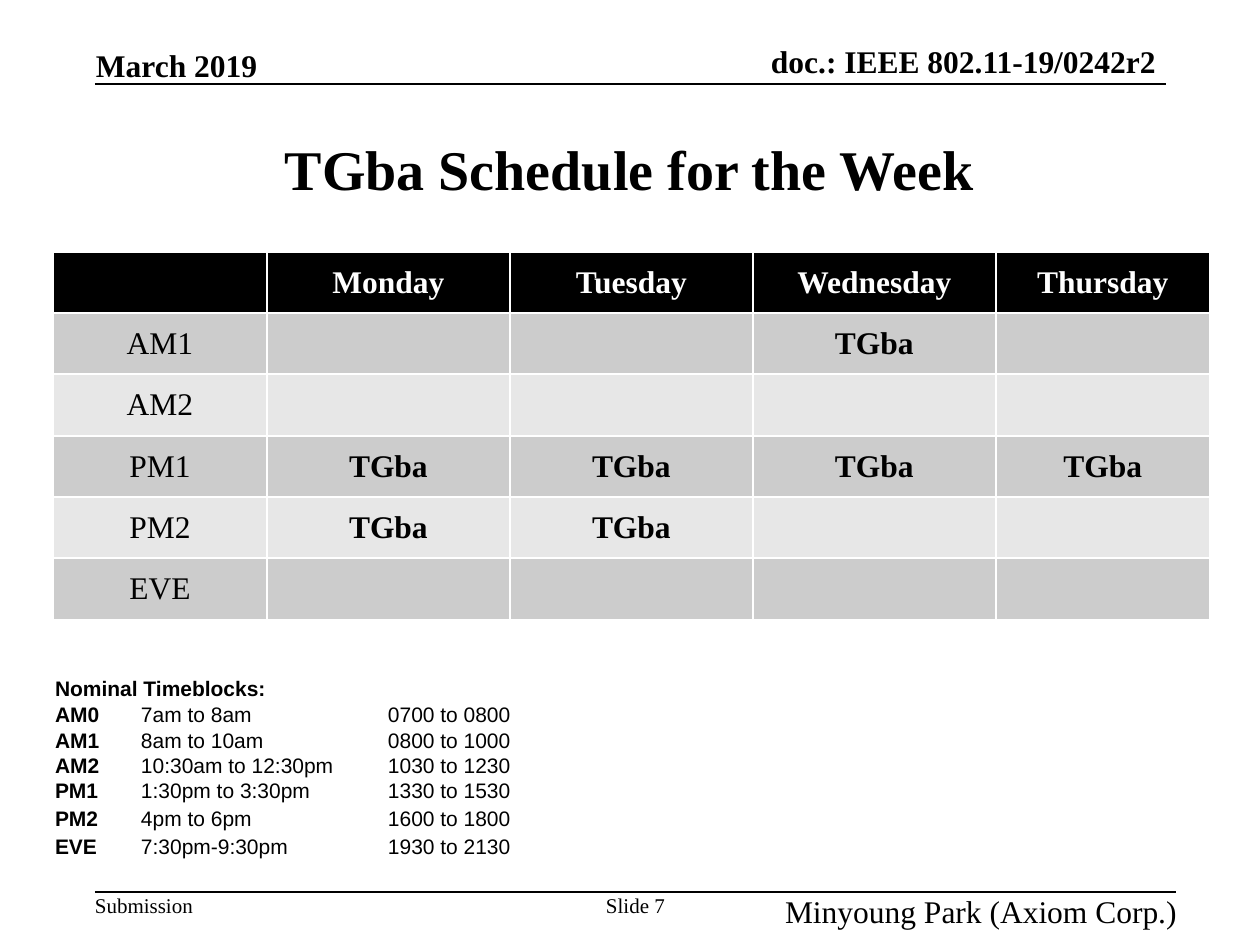
from dataclasses import dataclass
from typing import NamedTuple

from lxml import etree
from pptx import Presentation
from pptx.dml.color import RGBColor
from pptx.enum.shapes import MSO_CONNECTOR
from pptx.enum.text import MSO_ANCHOR, PP_ALIGN
from pptx.oxml.ns import qn
from pptx.util import Pt

EMU_PER_INCH, PX_PER_INCH = 914400, 126
LEFT, CENTER, RIGHT = PP_ALIGN.LEFT, PP_ALIGN.CENTER, PP_ALIGN.RIGHT
TOP, MIDDLE, BOTTOM = MSO_ANCHOR.TOP, MSO_ANCHOR.MIDDLE, MSO_ANCHOR.BOTTOM
STRAIGHT = MSO_CONNECTOR.STRAIGHT
TITLE_ONLY = 5
PLAIN_TABLE_STYLE = "{2D5ABB26-0587-4C30-8999-92F81FD0307C}"


@dataclass(frozen=True)
class Theme:
    ink: str = "000000"
    paper: str = "FFFFFF"
    bands: tuple = ("CCCCCC", "E7E7E7")
    serif: str = "Times New Roman"
    sans: str = "Arial"
    title: int = 32
    body: int = 18
    small: int = 12


class Label(NamedTuple):
    text: str
    left: int
    top: int
    width: int
    height: int
    size: int
    bold: bool = False
    align: PP_ALIGN = LEFT
    anchor: MSO_ANCHOR = TOP
    wrap: bool = False


class Rule(NamedTuple):
    left: int
    right: int
    y: int


class Timeblock(NamedTuple):
    name: str
    hours: str
    clock: str


THEME = Theme()

LABELS = [
    Label("doc.: IEEE 802.11-19/0242r2", 704, 42, 452, 38, THEME.body, True, RIGHT, BOTTOM),
    Label("March 2019", 96, 46, 185, 38, THEME.body, True, LEFT, BOTTOM),
    Label("Submission", 95, 893, 98, 25, THEME.small),
    Label("Slide 7", 599, 893, 73, 25, THEME.small, align=CENTER),
    Label("Minyoung Park (Axiom Corp.)", 747, 892, 430, 25, THEME.body, align=RIGHT, wrap=True),
]
RULES = [Rule(95, 1166, 84), Rule(95, 1176, 892)]

DAYS = ["Monday", "Tuesday", "Wednesday", "Thursday"]
SESSION = "TGba"
SESSION_DAYS = {
    "AM1": ["Wednesday"],
    "AM2": [],
    "PM1": DAYS,
    "PM2": ["Monday", "Tuesday"],
    "EVE": [],
}
TIMEBLOCKS = [
    Timeblock("AM0", "7am to 8am", "0700 to 0800"),
    Timeblock("AM1", "8am to 10am", "0800 to 1000"),
    Timeblock("AM2", "10:30am to 12:30pm", "1030 to 1230"),
    Timeblock("PM1", "1:30pm to 3:30pm", "1330 to 1530"),
    Timeblock("PM2", "4pm to 6pm", "1600 to 1800"),
    Timeblock("EVE", "7:30pm-9:30pm", "1930 to 2130"),
]


def emu(px: int) -> int:
    return round(px * EMU_PER_INCH / PX_PER_INCH)


def write(frame, text: str, *, size: int, font: str = THEME.serif, color: str = THEME.ink,
          bold: bool = False, align: PP_ALIGN = LEFT) -> None:
    """Fill a text frame; an empty text only fixes the line height."""
    paragraph = frame.paragraphs[0]
    paragraph.alignment = align
    if not text:
        etree.SubElement(paragraph._p, qn("a:endParaRPr"), sz=str(size * 100))
        return
    run = paragraph.add_run()
    run.text = text
    run.font.size, run.font.name, run.font.bold = Pt(size), font, bold
    run.font.color.rgb = RGBColor.from_string(color)


def set_margins(holder, x: int, y: int) -> None:
    holder.margin_left = holder.margin_right = emu(x)
    holder.margin_top = holder.margin_bottom = emu(y)


def add_label(slide, label: Label) -> None:
    box = slide.shapes.add_textbox(*map(emu, label[1:5]))
    frame = box.text_frame
    frame.word_wrap, frame.vertical_anchor = label.wrap, label.anchor
    set_margins(frame, 0, 0)
    write(frame, label.text, size=label.size, bold=label.bold, align=label.align)


def add_rule(slide, rule: Rule) -> None:
    line = slide.shapes.add_connector(
        STRAIGHT, emu(rule.left), emu(rule.y), emu(rule.right), emu(rule.y))
    line.line.width = Pt(1)
    line.line.color.rgb = RGBColor.from_string(THEME.ink)
    etree.SubElement(line._element.spPr, qn("a:effectLst"))


def add_grid(slide, left: int, top: int, columns: list[int], rows: list[int]):
    """Add an unstyled table with the given column widths and row heights."""
    grid = slide.shapes.add_table(
        len(rows), len(columns), emu(left), emu(top), emu(sum(columns)), emu(sum(rows))).table
    grid.first_row = grid.horz_banding = False
    grid._tbl.tblPr.find(qn("a:tableStyleId")).text = PLAIN_TABLE_STYLE
    for column, width in zip(grid.columns, columns):
        column.width = emu(width)
    for row, height in zip(grid.rows, rows):
        row.height = emu(height)
    return grid


def add_borders(cell, color: str) -> None:
    properties = cell._tc.get_or_add_tcPr()
    for side in ("lnL", "lnR", "lnT", "lnB"):
        border = etree.SubElement(properties, qn(f"a:{side}"), w=str(Pt(1)))
        fill = etree.SubElement(border, qn("a:solidFill"))
        etree.SubElement(fill, qn("a:srgbClr"), val=color)


def add_schedule(slide) -> None:
    content = [["", *DAYS]] + [
        [slot, *(SESSION if day in booked else "" for day in DAYS)]
        for slot, booked in SESSION_DAYS.items()]
    grid = add_grid(slide, 53, 252, [214, 243, 243, 243, 214], [61, 61, 62] * 2)
    for r, texts in enumerate(content):
        header = r == 0
        fill = THEME.ink if header else THEME.bands[(r - 1) % 2]
        for c, text in enumerate(texts):
            cell = grid.cell(r, c)
            add_borders(cell, THEME.paper)
            cell.fill.solid()
            cell.fill.fore_color.rgb = RGBColor.from_string(fill)
            cell.vertical_anchor = MIDDLE
            write(cell.text_frame, text, size=THEME.body, bold=header or c > 0,
                  color=THEME.paper if header else THEME.ink, align=CENTER)


def add_timeblocks(slide) -> None:
    grid = add_grid(slide, 54, 676, [86, 165, 82, 83, 83], [25, 26, 25, 25, 25, 28, 28])
    content = [["Nominal Timeblocks:", "", "", "", ""]] + [
        [block.name, block.hours, "", block.clock, ""] for block in TIMEBLOCKS]
    for r, texts in enumerate(content):
        for c, text in enumerate(texts):
            cell = grid.cell(r, c)
            cell.fill.background()
            cell.vertical_anchor = BOTTOM
            set_margins(cell, 1, 0)
            write(cell.text_frame, text, size=THEME.small, font=THEME.sans, bold=c == 0)
    grid.cell(0, 0).merge(grid.cell(0, 2))
    for r, block in enumerate(TIMEBLOCKS, start=1):
        grid.cell(r, 3).merge(grid.cell(r, 4))
        if ":" in block.hours:
            grid.cell(r, 1).merge(grid.cell(r, 2))


def main() -> None:
    deck = Presentation()
    deck.slide_width, deck.slide_height = emu(1260), emu(945)
    slide = deck.slides.add_slide(deck.slide_layouts[TITLE_ONLY])

    title = slide.shapes.title
    title.left, title.top, title.width, title.height = map(emu, (94, 95, 1071, 147))
    title.text_frame.vertical_anchor = MIDDLE
    write(title.text_frame, "TGba Schedule for the Week", size=THEME.title, bold=True, align=CENTER)

    for rule in RULES:
        add_rule(slide, rule)
    for label in LABELS:
        add_label(slide, label)
    add_schedule(slide)
    add_timeblocks(slide)
    deck.save("out.pptx")


if __name__ == "__main__":
    main()
